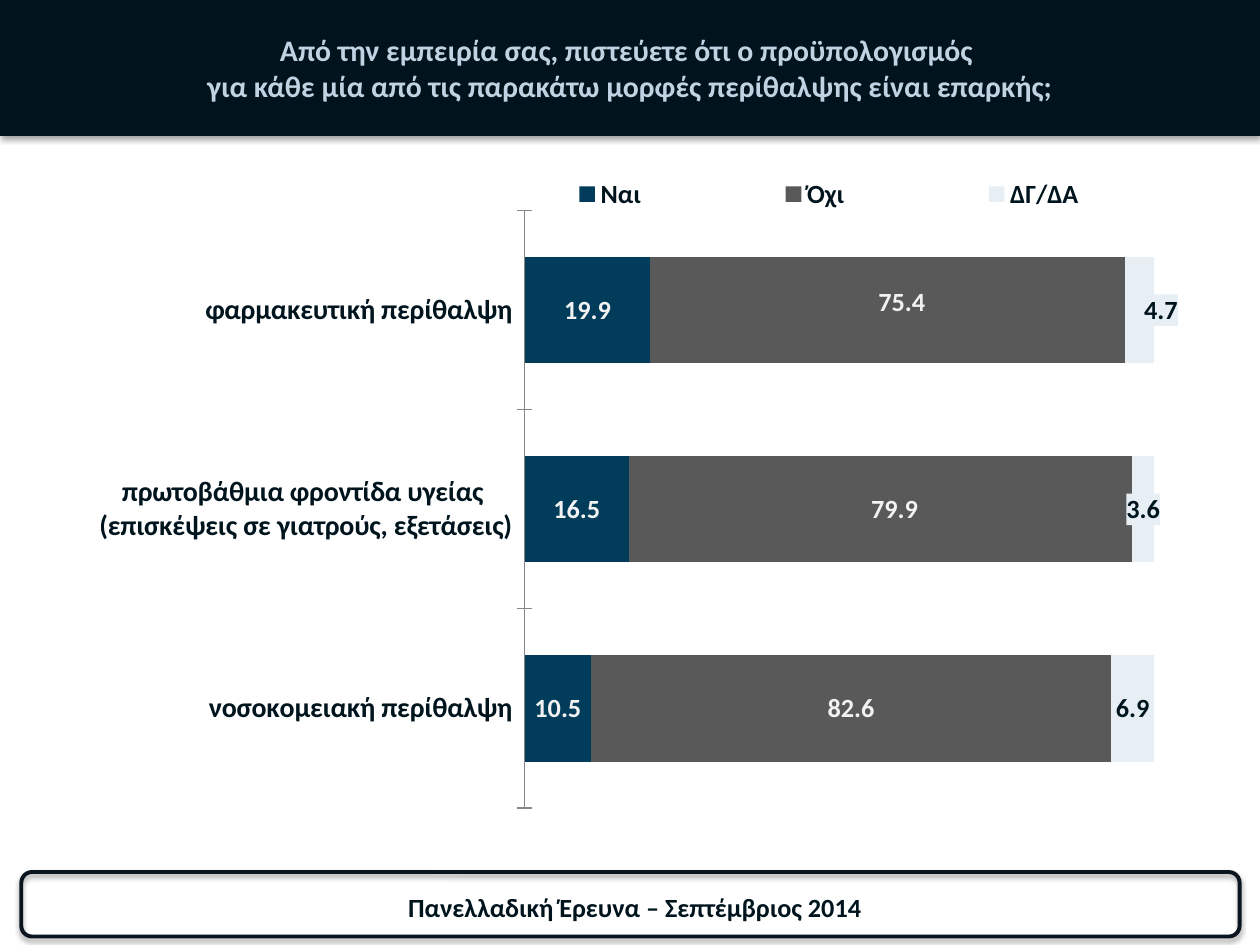
from dataclasses import dataclass
from lxml import etree
from pptx import Presentation
from pptx import util as u
from pptx.chart.data import CategoryChartData
from pptx.dml.color import RGBColor
from pptx.enum import chart as kinds, shapes, text
from pptx.oxml.ns import qn


@dataclass(frozen=True)
class Theme:
    font: str = "Calibri"
    ink: str = "00141E"
    edge: str = "0A1520"
    head: str = "BFD3E3"
    light: str = "F2F2F2"
    axis: str = "868686"
    title: float = 17
    cats: float = 16
    small: float = 15


@dataclass(frozen=True)
class Box:
    left: float
    top: float
    width: float
    height: float

    def cm(self) -> list:
        return [u.Cm(n) for n in (self.left, self.top, self.width, self.height)]


@dataclass(frozen=True)
class Group:
    name: str
    vals: tuple
    fill: str
    ink: str
    moves: dict  # point number -> label shift, as shares of the chart
    back: bool = False


T = Theme()
CATS = (
    "φαρμακευτική περίθαλψη",
    "πρωτοβάθμια φροντίδα υγείας \n(επισκέψεις σε γιατρούς, εξετάσεις)",
    "νοσοκομειακή περίθαλψη",
)
GROUPS = (
    Group("Ναι", (19.9, 16.5, 10.5), "013D5B", T.light, {}),
    Group("Όχι", (75.4, 79.9, 82.6), "595959", T.light,
          {0: (0.01, -0.01), 1: (0.01, 0), 2: (0, 0)}),
    Group("ΔΓ/ΔΑ", (4.7, 3.6, 6.9), "E7EFF5", T.ink, {0: (0.015, 0)}, True),
)
BAND = Box(0, 0, 25.4, 2.74)


def style(font, size: float, hue: str) -> None:
    font.name, font.size, font.bold = T.font, u.Pt(size), True
    font.color.rgb = RGBColor.from_string(hue)


def shade(shape, alpha: int, dist: float) -> None:
    """Give a shape a soft shadow straight below it."""
    shape.shadow.inherit = False
    glow = etree.SubElement(shape.element.spPr.find(qn("a:effectLst")),
                            qn("a:outerShdw"), blurRad=str(u.Pt(3.1)),
                            dist=str(u.Pt(dist)), dir="5400000", rotWithShape="0")
    hue = etree.SubElement(glow, qn("a:srgbClr"), val="000000")
    etree.SubElement(hue, qn("a:alpha"), val=str(alpha * 1000))


def write(slide, box: Box, lines: tuple, size: float, hue: str) -> None:
    frame = slide.shapes.add_textbox(*box.cm()).text_frame
    frame.word_wrap = True
    frame.vertical_anchor = text.MSO_ANCHOR.MIDDLE
    para = frame.paragraphs[0]
    para.alignment = text.PP_ALIGN.CENTER
    for i, line in enumerate(lines):
        if i:
            para.add_line_break()
        run = para.add_run()
        run.text = line
        style(run.font, size, hue)


def place(node, index: int, **parts) -> None:
    """Put a manual layout into a chart part."""
    for old in node.findall(qn("c:layout")):
        node.remove(old)
    layout = etree.Element(qn("c:layout"))
    node.insert(index, layout)
    manual = etree.SubElement(layout, qn("c:manualLayout"))
    for tag, val in parts.items():
        etree.SubElement(manual, qn(f"c:{tag}"), val=str(val))


def tint(labels, hue: str) -> None:
    """Fill the ground behind data labels."""
    props = etree.Element(qn("c:spPr"))
    fill = etree.SubElement(props, qn("a:solidFill"))
    etree.SubElement(fill, qn("a:srgbClr"), val=hue)
    for old in labels.findall(qn("c:spPr")):
        labels.remove(old)
    labels.find(qn("c:txPr")).addprevious(props)


def paint(series, node, group: Group) -> None:
    series.format.fill.solid()
    series.format.fill.fore_color.rgb = RGBColor.from_string(group.fill)
    series.invert_if_negative = False
    labels = series.data_labels
    labels.show_value = True
    labels.number_format, labels.number_format_is_linked = "0.0", False
    style(labels.font, T.small, group.ink)
    every = node.find(qn("c:dLbls"))
    if group.back:
        tint(every, group.fill)
    for i, (x, y) in group.moves.items():
        style(series.points[i].data_label.font, T.small, group.ink)
        label = every.findall(qn("c:dLbl"))[-1]
        place(label, 1, x=x, y=y)
        if group.back:
            tint(label, group.fill)


def plot(slide, box: Box) -> None:
    data = CategoryChartData(number_format="0.0")
    data.categories = CATS
    for group in GROUPS:
        data.add_series(group.name, group.vals)
    chart = slide.shapes.add_chart(kinds.XL_CHART_TYPE.BAR_STACKED_100,
                                   *box.cm(), data).chart
    chart.has_title = False
    chart.font.name, chart.font.size = T.font, u.Pt(18)
    root = chart.element

    # Bars and labels
    bars = chart.plots[0]
    bars.gap_width, bars.overlap, bars.vary_by_categories = 87, 100, False
    for series, node, group in zip(bars.series, list(root.iter(qn("c:ser"))), GROUPS):
        paint(series, node, group)

    # Axes
    side = chart.category_axis
    side.reverse_order = True
    side.major_tick_mark = kinds.XL_TICK_MARK.CROSS
    side.format.line.color.rgb = RGBColor.from_string(T.axis)
    style(side.tick_labels.font, T.cats, T.ink)
    chart.value_axis.has_major_gridlines = False
    chart.value_axis.visible = False

    # Legend and plot area
    chart.has_legend = True
    chart.legend.position = kinds.XL_LEGEND_POSITION.RIGHT
    chart.legend.include_in_layout = False
    style(chart.legend.font, T.small, T.ink)
    place(next(root.iter(qn("c:legend"))), 1, xMode="edge", yMode="edge",
          x=0.45, y=0.04, w=0.54, h=0.07)
    place(next(root.iter(qn("c:plotArea"))), 0, layoutTarget="inner",
          xMode="edge", yMode="edge", x=0.507, y=0.096, w=0.441, h=0.77)


def main() -> None:
    deck = Presentation()
    deck.slide_width, deck.slide_height = u.Cm(25.4), u.Cm(19.05)
    slide = deck.slides.add_slide(deck.slide_layouts[6])

    # Title band
    band = slide.shapes.add_shape(shapes.MSO_SHAPE.RECTANGLE, *BAND.cm())
    band.fill.solid()
    band.fill.fore_color.rgb = RGBColor.from_string(T.ink)
    band.line.fill.background()
    shade(band, 35, 1.8)

    # Footer frame
    frame = slide.shapes.add_shape(shapes.MSO_SHAPE.ROUNDED_RECTANGLE,
                                   *Box(0.43, 17.58, 24.56, 1.3).cm())
    frame.fill.background()
    frame.line.color.rgb = RGBColor.from_string(T.edge)
    frame.line.width = u.Pt(2.25)
    shade(frame, 38, 1.6)

    # Words and chart
    write(slide, Box(5.08, 17.83, 15.44, 0.89),
          ("Πανελλαδική Έρευνα – Σεπτέμβριος 2014",), T.small, T.ink)
    write(slide, BAND,
          ("Από την εμπειρία σας, πιστεύετε ότι ο προϋπολογισμός ",
           "για κάθε μία από τις παρακάτω μορφές περίθαλψης είναι επαρκής;"),
          T.title, T.head)
    plot(slide, Box(-4.01, 2.74, 28.78, 15.65))
    deck.save("out.pptx")


if __name__ == "__main__":
    main()
